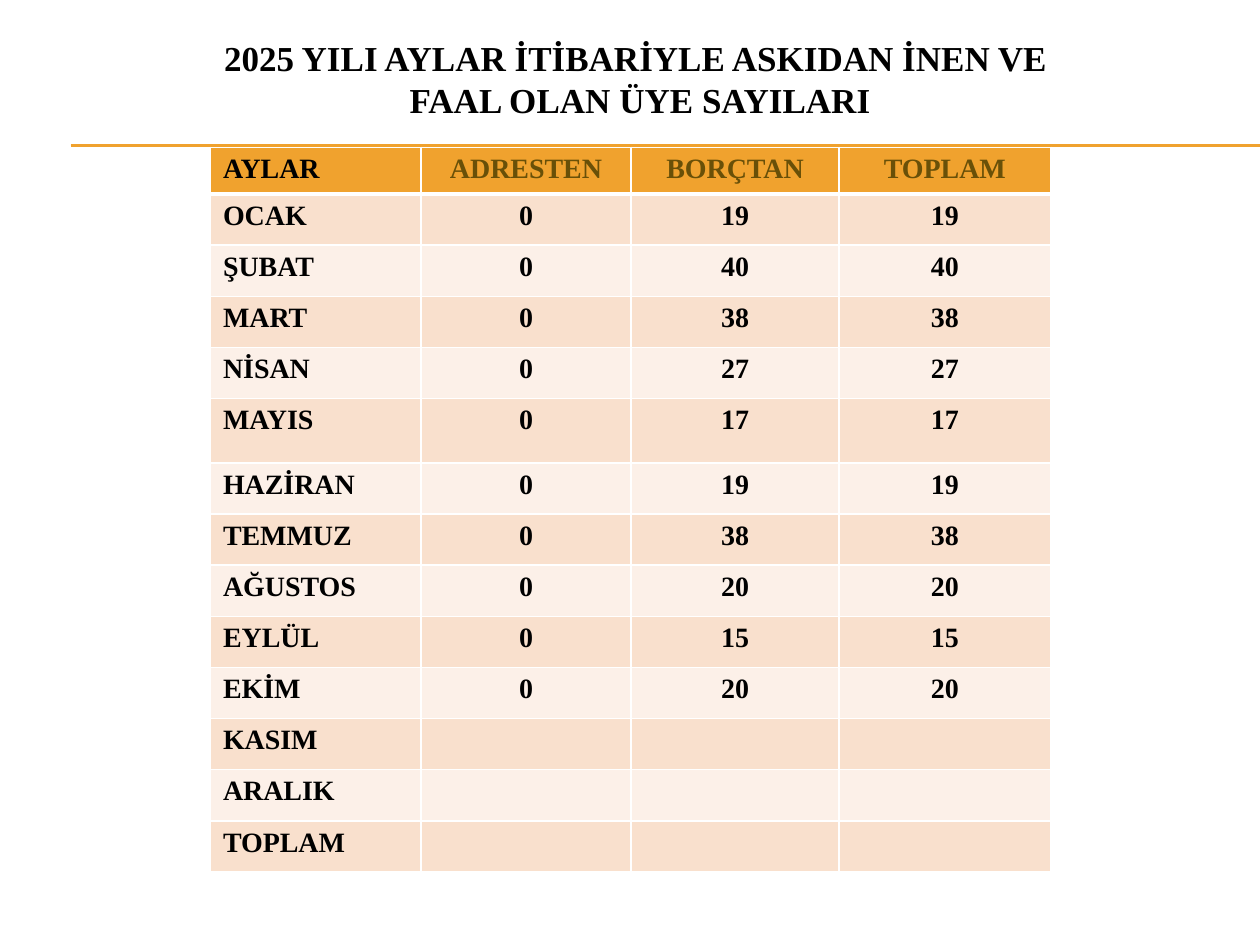
"""Build the slide of monthly counts of reactivated members."""
from lxml.etree import SubElement
from pptx import Presentation
from pptx.dml.color import RGBColor
from pptx.enum.shapes import MSO_CONNECTOR
from pptx.enum.text import MSO_ANCHOR, PP_ALIGN
from pptx.oxml import parse_xml
from pptx.oxml.ns import nsdecls, qn
from pptx.util import Inches, Pt

TITLE = "2025 YILI AYLAR İTİBARİYLE ASKIDAN İNEN VE \vFAAL OLAN ÜYE SAYILARI"
HEADERS = ["AYLAR", "ADRESTEN", "BORÇTAN", "TOPLAM"]
MONTHS = [
    ("OCAK", 0, 19), ("ŞUBAT", 0, 40), ("MART", 0, 38), ("NİSAN", 0, 27),
    ("MAYIS", 0, 17), ("HAZİRAN", 0, 19), ("TEMMUZ", 0, 38),
    ("AĞUSTOS", 0, 20), ("EYLÜL", 0, 15), ("EKİM", 0, 20),
]
EMPTY_ROWS = ["KASIM", "ARALIK", "TOPLAM"]

FONT = "Times New Roman"
BLACK = RGBColor(0x00, 0x00, 0x00)
ORANGE = RGBColor(0xF0, 0xA2, 0x2E)
BROWN = RGBColor(0x69, 0x50, 0x08)
BANDS = [RGBColor(0xFC, 0xF0, 0xE8), RGBColor(0xF9, 0xE0, 0xCD)]
WHITE = RGBColor(0xFF, 0xFF, 0xFF)

COLUMN_WIDTHS = [1.67, 1.67, 1.65, 1.68]
HEADER_HEIGHT, ROW_HEIGHT, MAY_HEIGHT = 0.37, 0.406, 0.51
RULE_LEFT, RULE_RIGHT, RULE_TOPS = 0.56, 10, [1.15, 1.16]


def style(paragraph, size, color, alignment):
    paragraph.alignment = alignment
    font = paragraph.font
    font.name, font.size, font.bold = FONT, Pt(size), True
    font.color.rgb = color


def add_borders(cell, bottom_width):
    properties = cell._tc.get_or_add_tcPr()
    widths = {"lnL": 1, "lnR": 1, "lnT": 1, "lnB": bottom_width}
    for index, (side, width) in enumerate(widths.items()):
        properties.insert(index, parse_xml(
            f'<a:{side} {nsdecls("a")} w="{Pt(width)}"><a:solidFill>'
            f'<a:srgbClr val="{WHITE}"/></a:solidFill></a:{side}>'))


def add_rules(slide):
    for top in RULE_TOPS:
        rule = slide.shapes.add_connector(
            MSO_CONNECTOR.STRAIGHT, Inches(RULE_LEFT), Inches(top),
            Inches(RULE_RIGHT), Inches(top))
        rule.line.color.rgb = ORANGE
        rule.line.width = Pt(0.75)
        SubElement(rule._element.spPr, qn("a:effectLst"))


def add_title(slide):
    title = slide.shapes.title
    title.left, title.top = Inches(0.33), Inches(0.16)
    title.width, title.height = Inches(9.5), Inches(0.92)
    title.text_frame.text = TITLE
    title.text_frame.vertical_anchor = MSO_ANCHOR.MIDDLE
    style(title.text_frame.paragraphs[0], 20, BLACK, PP_ALIGN.CENTER)


def add_month_table(slide):
    rows = [HEADERS]
    rows += [(month, address, debt, address + debt) for month, address, debt in MONTHS]
    rows += [(label, "", "", "") for label in EMPTY_ROWS]
    heights = [HEADER_HEIGHT] + [
        MAY_HEIGHT if row[0] == "MAYIS" else ROW_HEIGHT for row in rows[1:]]
    table = slide.shapes.add_table(
        len(rows), len(HEADERS), Inches(1.67), Inches(1.17),
        Inches(sum(COLUMN_WIDTHS)), Inches(sum(heights))).table
    for column, width in zip(table.columns, COLUMN_WIDTHS):
        column.width = Inches(width)
    for r, (values, height) in enumerate(zip(rows, heights)):
        table.rows[r].height = Inches(height)
        for c, value in enumerate(values):
            cell = table.cell(r, c)
            cell.text = str(value)
            style(cell.text_frame.paragraphs[0], 16,
                  BROWN if r == 0 and c > 0 else BLACK,
                  PP_ALIGN.CENTER if c > 0 else PP_ALIGN.LEFT)
            cell.fill.solid()
            cell.fill.fore_color.rgb = ORANGE if r == 0 else BANDS[r % 2]
            add_borders(cell, 3 if r == 0 else 1)


def main():
    presentation = Presentation()
    presentation.slide_width, presentation.slide_height = Inches(10), Inches(7.5)
    slide = presentation.slides.add_slide(presentation.slide_layouts[5])
    add_rules(slide)
    add_title(slide)
    add_month_table(slide)
    presentation.save("out.pptx")


if __name__ == "__main__":
    main()
